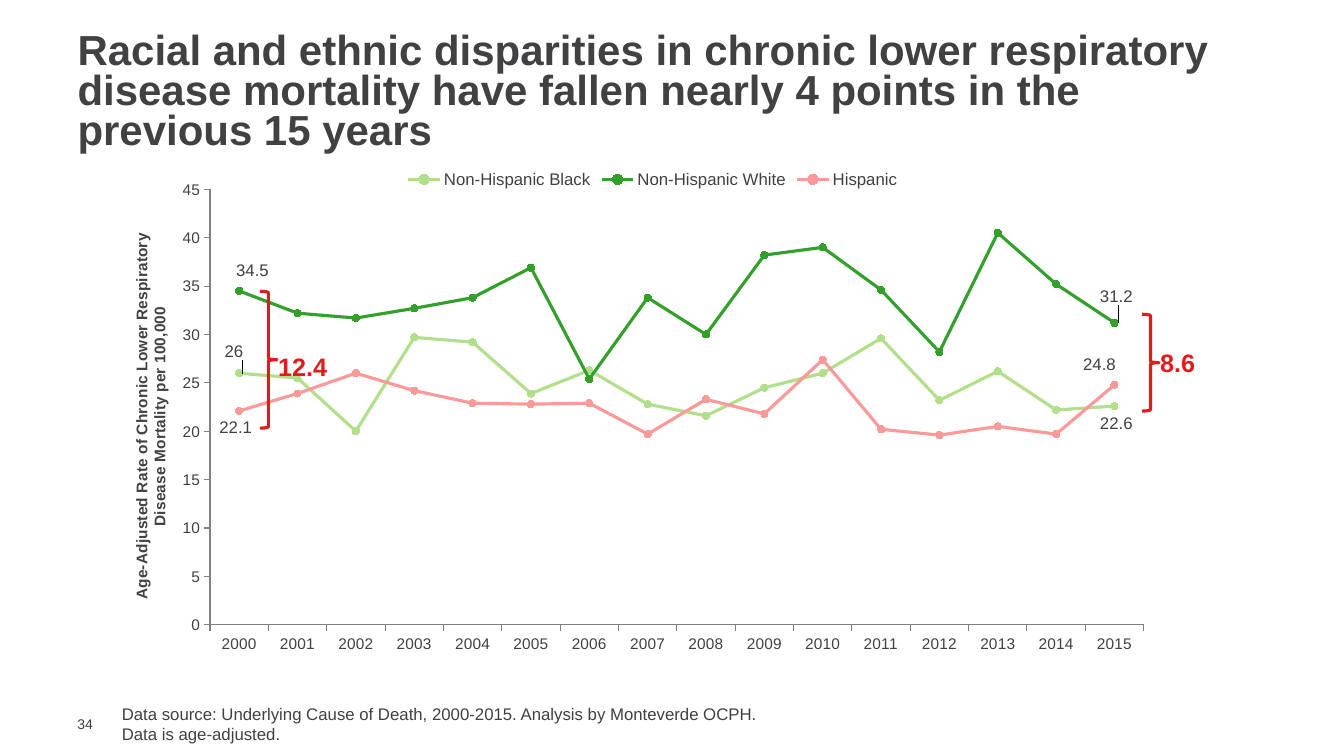
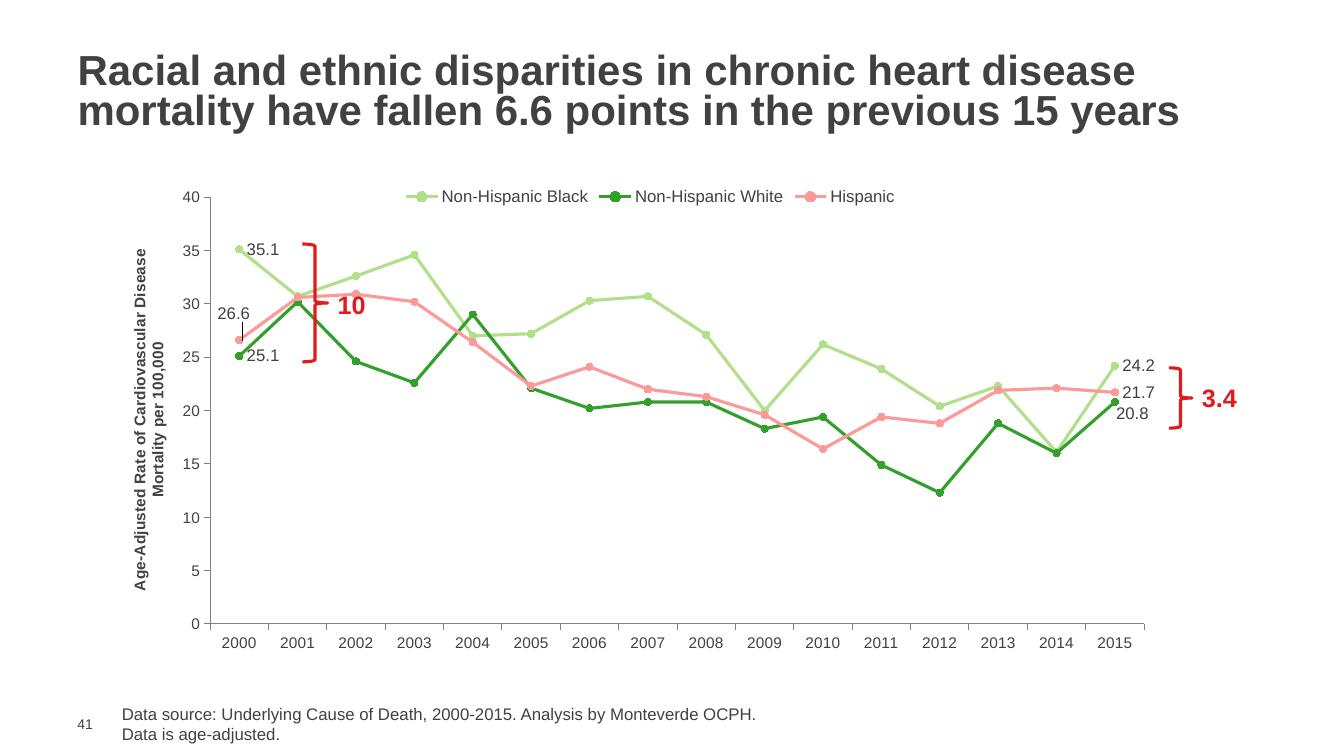
from lxml.etree import SubElement, fromstring
from pptx import Presentation
from pptx.chart.data import CategoryChartData
from pptx.dml.color import RGBColor
from pptx.enum.chart import (XL_CHART_TYPE, XL_LABEL_POSITION, XL_LEGEND_POSITION,
                             XL_MARKER_STYLE, XL_TICK_MARK)
from pptx.enum.shapes import MSO_SHAPE
from pptx.enum.text import MSO_ANCHOR, MSO_AUTO_SIZE, PP_ALIGN
from pptx.oxml.ns import qn
from pptx.util import Cm, Pt

FONT = "Arial"
COLORS = {"text": "414042", "axis": "808080", "gap": "E31A1C"}
GROUPS = {"Non-Hispanic Black": "B2DF8A", "Non-Hispanic White": "33A02C", "Hispanic": "FB9A99"}
YEARS = [str(year) for year in range(2000, 2016)]
SOURCE = ("Data source: Underlying Cause of Death, 2000-2015. Analysis by Monteverde OCPH.\n"
          "Data is age-adjusted.")
TITLE_BOX = (1.7, 0.69, 30.48, 3.33)
FOOTER_BOX = (1.7, 17.6, 25.78, 1.27)
LEADER_LINES = ('<c:extLst xmlns:c="http://schemas.openxmlformats.org/drawingml/2006/chart">'
                '<c:ext uri="{CE6537A1-D6FC-4f65-9D91-7224C49458BB}" '
                'xmlns:c15="http://schemas.microsoft.com/office/drawing/2012/chart">'
                '<c15:showLeaderLines val="1"/></c:ext></c:extLst>')

RESPIRATORY = {
    "number": "34",
    "title": "Racial and ethnic disparities in chronic lower respiratory disease mortality "
             "have fallen nearly 4 points in the previous 15 years",
    "axis": "Age-Adjusted Rate of Chronic Lower Respiratory Disease Mortality per 100,000",
    "box": (3.23, 4.01, 26.44, 13.13),
    "plot": (7.8, 5.8, 89, 83.6),
    "top": 45,
    "rates": [
        [26, 25.5, 20, 29.7, 29.2, 23.9, 26.3, 22.8, 21.6, 24.5, 26, 29.6, 23.2, 26.2, 22.2, 22.6],
        [34.5, 32.2, 31.7, 32.7, 33.8, 36.9, 25.4, 33.8, 30, 38.2, 39, 34.6, 28.2, 40.5, 35.2, 31.2],
        [22.1, 23.9, 26, 24.2, 22.9, 22.8, 22.9, 19.7, 23.3, 21.8, 27.4, 20.2, 19.6, 20.5, 19.7, 24.8],
    ],
    "shifts": [[(-2.1, -4.2), (-2.1, 3.3)],
               [(-1, -3.8), (-2.1, -5)],
               [(-2.6, 3.3), (-3.7, -3.8)]],
    "gaps": [("12.4", (6.55, 7.34, 0.43, 3.45), (-0.22, 0.18)),
             ("8.6", (28.78, 7.92, 0.43, 2.44), (-0.22, 0))],
}
HEART = {
    "number": "41",
    "title": "Racial and ethnic disparities in chronic heart disease mortality "
             "have fallen 6.6 points in the previous 15 years",
    "axis": "Age-Adjusted Rate of Cardiovascular Disease Mortality per 100,000",
    "box": (3.18, 4.45, 26.42, 12.67),
    "plot": (8, 4.1, 89.1, 84.9),
    "top": 40,
    "rates": [
        [35.1, 30.7, 32.6, 34.6, 27, 27.2, 30.3, 30.7, 27.1, 20, 26.2, 23.9, 20.4, 22.3, 16.1, 24.2],
        [25.1, 30.2, 24.6, 22.6, 29, 22.1, 20.2, 20.8, 20.8, 18.3, 19.4, 14.9, 12.3, 18.8, 16, 20.8],
        [26.6, 30.6, 30.9, 30.2, 26.4, 22.3, 24.1, 22, 21.3, 19.6, 16.4, 19.4, 18.8, 21.9, 22.1, 21.7],
    ],
    "shifts": [[None, None], [None, (-0.6, 2.4)], [(-2.8, -5.2), None]],
    "gaps": [("10", (7.62, 6.15, 0.64, 2.97), (0, 0.06)),
             ("3.4", (29.46, 9.27, 0.58, 1.52), (0, 0))],
}


def rgb(color):
    """Return the colour for a hex string."""
    return RGBColor.from_string(color)


def cm_box(box):
    """Turn a box in centimetres into lengths."""
    return [Cm(value) for value in box]


def style_font(font, size, color=COLORS["text"], bold=False):
    """Set face, size, colour and weight of a font."""
    font.name, font.size, font.bold = FONT, Pt(size), bold
    font.color.rgb = rgb(color)


def write(frame, text, size, color=COLORS["text"], bold=False, spacing=None, align=None):
    """Write lines of text as formatted paragraphs."""
    for index, line in enumerate(text.split("\n")):
        paragraph = frame.add_paragraph() if index else frame.paragraphs[0]
        run = paragraph.add_run()
        run.text = line
        style_font(run.font, size, color, bold)
        if spacing:
            paragraph.line_spacing = spacing
        if align is not None:
            paragraph.alignment = align


def add_label(slide, box, text, anchor=MSO_ANCHOR.TOP, insets=None, **style):
    """Add a wrapping text box."""
    frame = slide.shapes.add_textbox(*cm_box(box)).text_frame
    frame.word_wrap = True
    frame.vertical_anchor = anchor
    if insets:
        (frame.margin_left, frame.margin_top,
         frame.margin_right, frame.margin_bottom) = cm_box(insets)
    write(frame, text, **style)


def add_title(slide, box, text):
    """Place and fill the title placeholder."""
    title = slide.shapes.title
    title.left, title.top, title.width, title.height = cm_box(box)
    frame = title.text_frame
    frame.word_wrap = True
    frame.auto_size = MSO_AUTO_SIZE.NONE
    frame.vertical_anchor = MSO_ANCHOR.MIDDLE
    write(frame, text, 30, bold=True, spacing=0.8, align=PP_ALIGN.LEFT)


def add_footer(slide, box, number):
    """Add the page number and the data source."""
    left, top, width, height = box
    add_label(slide, (left, top + 0.43, 1.09, 0.43), number, size=10,
              anchor=MSO_ANCHOR.MIDDLE, insets=(0.25, 0, 0, 0))
    add_label(slide, (left + 1.12, top, width - 1.12, height), SOURCE, size=12)


def add_gap(slide, box, text, nudge):
    """Add a brace with the size of the gap beside it."""
    left, top, width, height = box
    brace = slide.shapes.add_shape(MSO_SHAPE.RIGHT_BRACE, *cm_box(box))
    brace.shadow.inherit = False
    brace.fill.background()
    brace.line.color.rgb = rgb(COLORS["gap"])
    brace.line.width = Pt(2.25)
    label_box = (left + width + nudge[0], top + height / 2 - 0.52 + nudge[1], 1.9, 1.04)
    add_label(slide, label_box, text, size=18, color=COLORS["gap"], bold=True)


def add_layout(parent, index, **settings):
    """Insert a manual chart layout under a chart element."""
    for old in parent.findall(qn("c:layout")):
        parent.remove(old)
    layout = parent.makeelement(qn("c:layout"), {})
    parent.insert(index, layout)
    manual = SubElement(layout, qn("c:manualLayout"))
    for name, value in settings.items():
        SubElement(manual, qn(f"c:{name}")).set("val", str(value))


def style_axis(axis):
    """Format the line, ticks and labels of an axis."""
    axis.has_major_gridlines = False
    axis.major_tick_mark = XL_TICK_MARK.OUTSIDE
    axis.minor_tick_mark = XL_TICK_MARK.NONE
    axis.format.line.color.rgb = rgb(COLORS["axis"])
    axis.format.line.width = Pt(0.75)
    style_font(axis.tick_labels.font, 11)


def style_series(series, color, shifts):
    """Format one group's line and label its first and last year."""
    series.smooth = False
    series.format.line.color.rgb = rgb(color)
    series.format.line.width = Pt(2.25)
    series.marker.style = XL_MARKER_STYLE.CIRCLE
    series.marker.size = 5
    series.marker.format.fill.solid()
    series.marker.format.fill.fore_color.rgb = rgb(color)
    series.marker.format.line.color.rgb = rgb(color)
    for year, shift in zip((0, len(YEARS) - 1), shifts):
        label = series.points[year].data_label
        style_font(label.font, 12)
        label.position = XL_LABEL_POSITION.RIGHT
        if shift:
            element = series._element.xpath(f"c:dLbls/c:dLbl[c:idx/@val='{year}']")[0]
            add_layout(element, 1, x=round(shift[0] / 100, 3), y=round(shift[1] / 100, 3))
    series.data_labels.show_value = False
    series.data_labels._element.append(fromstring(LEADER_LINES))


def add_rates_chart(slide, box, content):
    """Add the line chart of mortality rates by group."""
    rates = CategoryChartData()
    rates.categories = YEARS
    for group, values in zip(GROUPS, content["rates"]):
        rates.add_series(group, values)
    chart = slide.shapes.add_chart(XL_CHART_TYPE.LINE_MARKERS, *cm_box(box), rates).chart
    style_font(chart.font, 10)
    chart.has_title = False
    chart.has_legend = True
    chart.legend.position = XL_LEGEND_POSITION.TOP
    chart.legend.include_in_layout = False
    style_font(chart.legend.font, 12)
    style_axis(chart.category_axis)
    rate_axis = chart.value_axis
    style_axis(rate_axis)
    rate_axis.minimum_scale, rate_axis.maximum_scale = 0, content["top"]
    rate_axis.major_unit = 5
    write(rate_axis.axis_title.text_frame, content["axis"], 11, bold=True)
    rotation = rate_axis.axis_title._element.xpath(".//a:bodyPr")[0]
    rotation.set("rot", "-5400000")
    rotation.set("vert", "horz")
    chart.plots[0].vary_by_categories = False
    for series, color, shifts in zip(chart.plots[0].series, GROUPS.values(), content["shifts"]):
        style_series(series, color, shifts)
    x, y, w, h = (round(share / 100, 3) for share in content["plot"])
    add_layout(chart._chartSpace.xpath("c:chart/c:plotArea")[0], 0, layoutTarget="inner",
               xMode="edge", yMode="edge", x=x, y=y, w=w, h=h)


def add_disparity_slide(deck, content):
    """Add one slide on the change in a mortality gap."""
    slide = deck.slides.add_slide(deck.slide_layouts[5])
    add_title(slide, TITLE_BOX, content["title"])
    add_rates_chart(slide, content["box"], content)
    for text, box, nudge in content["gaps"]:
        add_gap(slide, box, text, nudge)
    add_footer(slide, FOOTER_BOX, content["number"])


def main():
    """Build and save the deck."""
    deck = Presentation()
    deck.slide_width, deck.slide_height = Cm(33.87), Cm(19.05)
    for content in (RESPIRATORY, HEART):
        add_disparity_slide(deck, content)
    deck.save("out.pptx")


if __name__ == "__main__":
    main()
